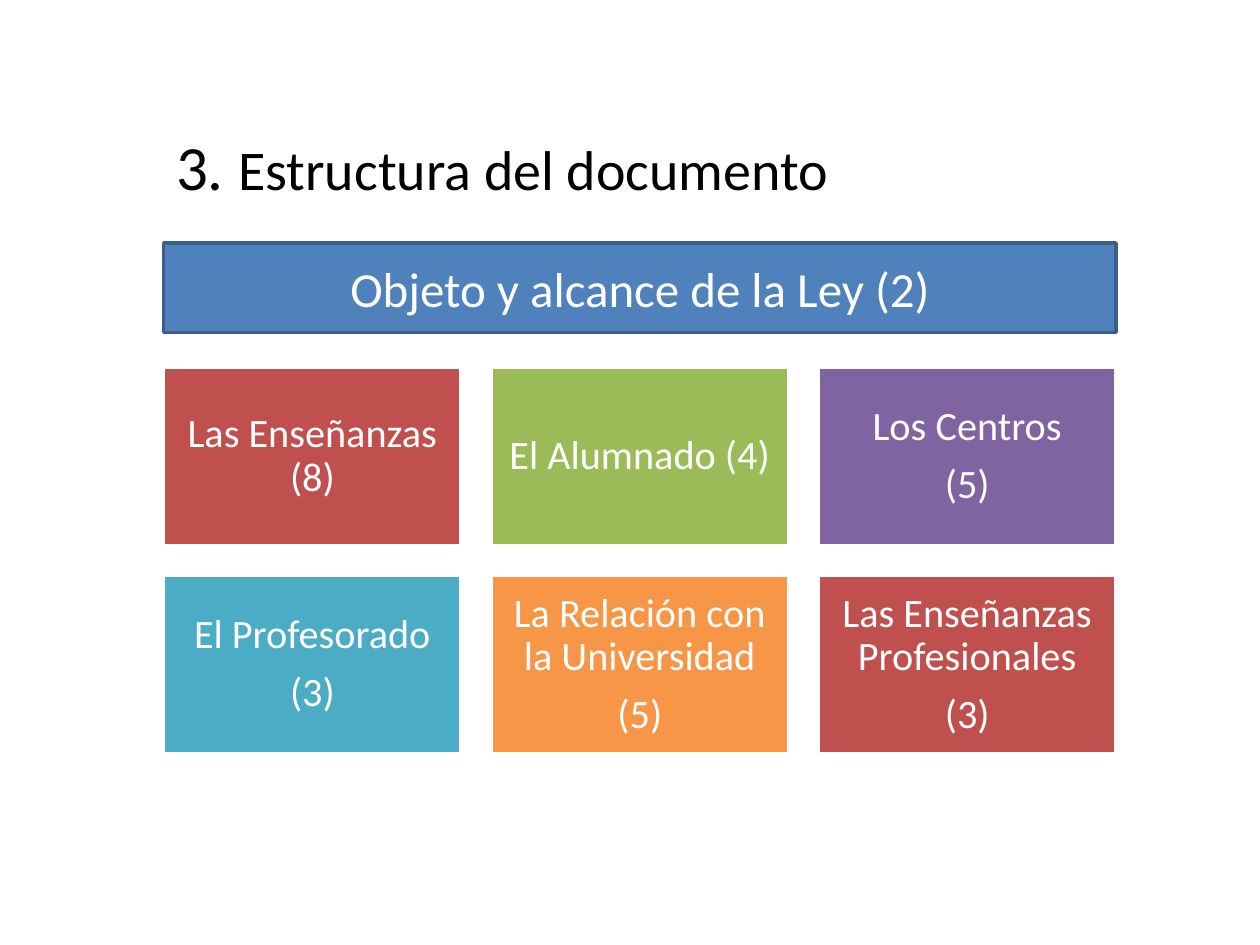
"""Build the slide that outlines the structure of the document."""
from pptx import Presentation
from pptx.dml.color import RGBColor
from pptx.enum.shapes import MSO_SHAPE
from pptx.enum.text import MSO_ANCHOR, PP_ALIGN
from pptx.util import Cm, Pt

FONT = "Calibri"
BLACK = RGBColor(0x00, 0x00, 0x00)
WHITE = RGBColor(0xFF, 0xFF, 0xFF)
BLUE = RGBColor(0x4F, 0x81, 0xBD)
DARK_BLUE = RGBColor(0x3A, 0x5F, 0x8C)
RED = RGBColor(0xC0, 0x50, 0x4D)
GREEN = RGBColor(0x9B, 0xBB, 0x59)
PURPLE = RGBColor(0x80, 0x64, 0xA2)
TEAL = RGBColor(0x4B, 0xAC, 0xC6)
ORANGE = RGBColor(0xF7, 0x96, 0x46)

LEFT = 3.3
COLUMNS = 3
BLOCK_TOP, BLOCK_W, BLOCK_H, GAP = 7.4, 6, 3.6, 0.6
BLOCKS = [
    (RED, ["Las Enseñanzas (8)"]),
    (GREEN, ["El Alumnado (4)"]),
    (PURPLE, ["Los Centros", "(5)"]),
    (TEAL, ["El Profesorado", "(3)"]),
    (ORANGE, ["La Relación con la Universidad", "(5)"]),
    (RED, ["Las Enseñanzas Profesionales", "(3)"]),
]


def set_font(font, size, color):
    font.name = FONT
    font.size = Pt(size)
    font.color.rgb = color


def add_title(s, parts):
    sp = s.shapes.add_textbox(Cm(LEFT), Cm(1.7), Cm(22.86), Cm(3.18))
    tf = sp.text_frame
    tf.word_wrap = True
    tf.vertical_anchor = MSO_ANCHOR.MIDDLE
    p = tf.paragraphs[0]
    p.alignment = PP_ALIGN.JUSTIFY
    p.line_spacing = 1.07
    p.space_after = Pt(6)
    for text, size in parts:
        r = p.add_run()
        r.text = text
        set_font(r.font, size, BLACK)


def add_box(s, x, y, w, h, fill, line, lines, size, spacing=1.0, after=0):
    sp = s.shapes.add_shape(MSO_SHAPE.RECTANGLE, Cm(x), Cm(y), Cm(w), Cm(h))
    sp.shadow.inherit = False
    sp.fill.solid()
    sp.fill.fore_color.rgb = fill
    sp.line.color.rgb = line
    sp.line.width = Pt(2)
    tf = sp.text_frame
    tf.word_wrap = True
    tf.vertical_anchor = MSO_ANCHOR.MIDDLE
    tf.margin_left = tf.margin_right = Cm(0.25)
    tf.margin_top = tf.margin_bottom = Cm(0.25)
    tf.text = "\n".join(lines)
    for p in tf.paragraphs:
        p.alignment = PP_ALIGN.CENTER
        p.line_spacing = spacing
        p.space_after = Pt(after)
        set_font(p.font, size, WHITE)


def add_blocks(s):
    for i, (fill, lines) in enumerate(BLOCKS):
        row, col = divmod(i, COLUMNS)
        x = LEFT + col * (BLOCK_W + GAP)
        y = BLOCK_TOP + row * (BLOCK_H + GAP)
        add_box(s, x, y, BLOCK_W, BLOCK_H, fill, WHITE, lines, 23, 0.9, 8)


def main():
    prs = Presentation()
    prs.slide_width, prs.slide_height = Cm(25.4), Cm(19.05)
    s = prs.slides.add_slide(prs.slide_layouts[6])
    add_title(s, [("3. ", 36), ("Estructura del documento", 32)])
    add_blocks(s)
    width = COLUMNS * BLOCK_W + (COLUMNS - 1) * GAP
    add_box(s, LEFT, 4.9, width, 1.8, BLUE, DARK_BLUE,
            ["Objeto y alcance de la Ley (2)"], 28)
    prs.save("out.pptx")


if __name__ == "__main__":
    main()
